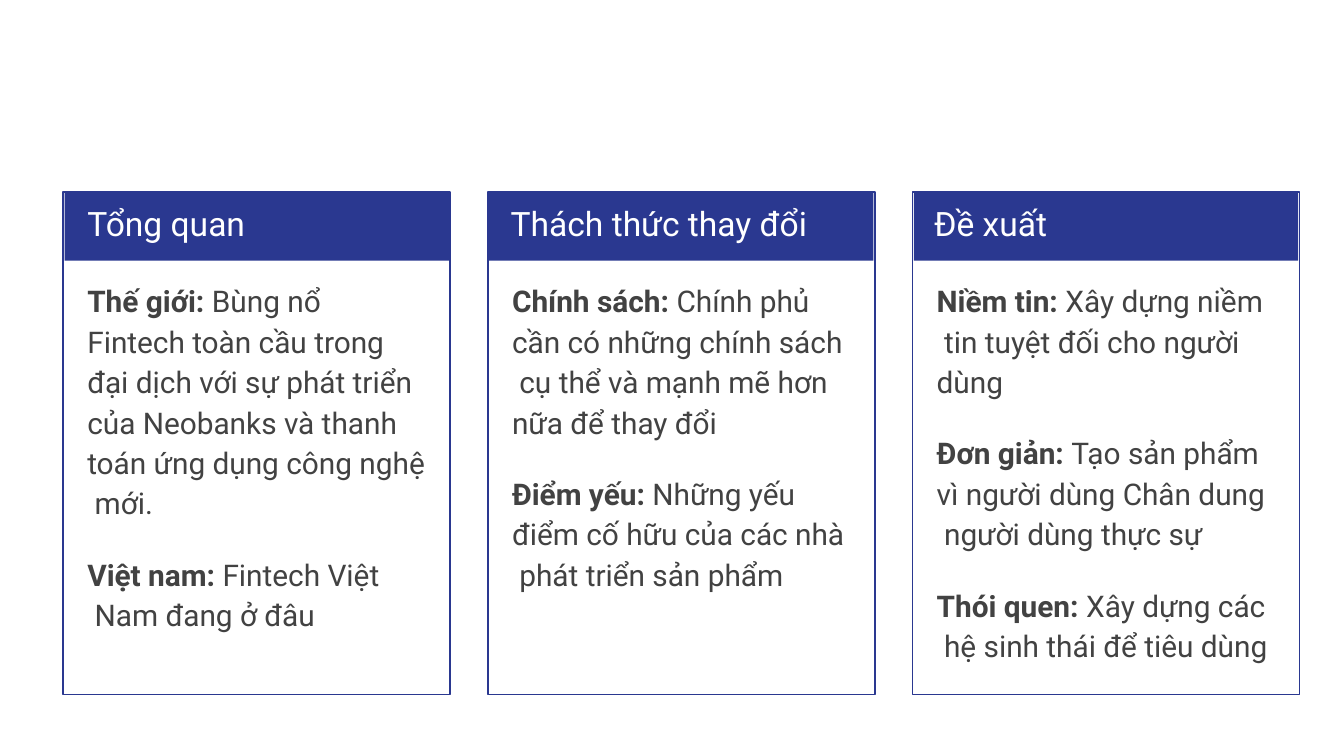
from pptx import Presentation
from pptx.dml.color import RGBColor
from pptx.enum.shapes import MSO_SHAPE
from pptx.enum.text import MSO_ANCHOR, MSO_AUTO_SIZE, PP_ALIGN
from pptx.util import Inches, Pt

RECTANGLE = MSO_SHAPE.RECTANGLE
TOP = MSO_ANCHOR.TOP
NO_AUTOFIT = MSO_AUTO_SIZE.NONE
LEFT = PP_ALIGN.LEFT

NAVY = RGBColor(0x2A, 0x38, 0x90)
WHITE = RGBColor(0xFF, 0xFF, 0xFF)
GREY = RGBColor(0x42, 0x42, 0x42)
FONT = "Roboto"

FIRST_LEFT, COLUMN_PITCH, COLUMN_WIDTH = 0.48, 3.16, 2.86
COLUMN_TOP, HEADER_HEIGHT, CARD_HEIGHT = 1.43, 0.51, 3.74
BODY_TOP = 2.06

COLUMNS = [
    ("Tổng quan", 0.17, 2.67, [
        ("Thế giới: ", "Bùng nổ\vFintech toàn cầu trong\vđại dịch với sự phát triển\v"
                       "của Neobanks và thanh\vtoán ứng dụng công nghệ\v mới."),
        ("Việt nam: ", "Fintech Việt\v Nam đang ở đâu"),
    ]),
    ("Thách thức thay đổi", 0.16, 2.37, [
        ("Chính sách: ", "Chính phủ\vcần có những chính sách\v"
                         " cụ thể và mạnh mẽ hơn\vnữa để thay đổi"),
        ("Điểm yếu: ", "Những yếu\vđiểm cố hữu của các nhà\v phát triển sản phẩm"),
    ]),
    ("Đề xuất", 0.15, 2.9, [
        ("Niềm tin: ", "Xây dựng niềm\v tin tuyệt đối cho người\vdùng"),
        ("Đơn giản: ", "Tạo sản phẩm\vvì người dùng Chân dung\v người dùng thực sự"),
        ("Thói quen: ", "Xây dựng các\v hệ sinh thái để tiêu dùng"),
    ]),
]


def set_frame(frame, indent, top):
    frame.word_wrap = True
    frame.auto_size = NO_AUTOFIT
    frame.vertical_anchor = TOP
    frame.margin_left, frame.margin_top = Inches(indent), Inches(top)
    frame.margin_right = frame.margin_bottom = 0


def format_paragraph(paragraph, size, color, spacing, before):
    paragraph.alignment = LEFT
    paragraph.line_spacing = spacing
    paragraph.space_before = Pt(before)
    for run in paragraph.runs:
        run.font.name = FONT
        run.font.size = Pt(size)
        run.font.color.rgb = color


prs = Presentation()
prs.slide_width = Inches(10)
prs.slide_height = prs.slide_width * 9 // 16
slide = prs.slides.add_slide(prs.slide_layouts[5])
shapes = slide.shapes

for column, (heading, heading_indent, body_height, points) in enumerate(COLUMNS):
    left = FIRST_LEFT + column * COLUMN_PITCH

    card = shapes.add_shape(RECTANGLE, Inches(left - 0.01), Inches(COLUMN_TOP),
                            Inches(COLUMN_WIDTH + 0.02), Inches(CARD_HEIGHT))
    card.shadow.inherit = False
    card.fill.background()
    card.line.color.rgb = NAVY
    card.line.width = Pt(0.75)

    if column == 0:
        header = shapes.title
        header.left, header.top = Inches(left), Inches(COLUMN_TOP)
        header.width, header.height = Inches(COLUMN_WIDTH), Inches(HEADER_HEIGHT)
    else:
        header = shapes.add_shape(RECTANGLE, Inches(left), Inches(COLUMN_TOP),
                                  Inches(COLUMN_WIDTH), Inches(HEADER_HEIGHT))
        header.shadow.inherit = False
    header.fill.solid()
    header.fill.fore_color.rgb = NAVY
    header.line.fill.background()
    header.text_frame.text = heading
    set_frame(header.text_frame, heading_indent, 0.08)
    format_paragraph(header.text_frame.paragraphs[0], 18, WHITE, 1.0, 6)

    body = shapes.add_textbox(Inches(left), Inches(BODY_TOP),
                              Inches(COLUMN_WIDTH), Inches(body_height)).text_frame
    set_frame(body, 0.17, 0.01)
    for number, (label, detail) in enumerate(points):
        paragraph = body.add_paragraph() if number else body.paragraphs[0]
        paragraph.text = label
        paragraph.runs[0].font.bold = True
        for row, line in enumerate(detail.split("\v")):
            if row:
                paragraph.add_line_break()
            paragraph.add_run().text = line
        format_paragraph(paragraph, 16, GREY, 1.13, 16.5 if number else 1)

prs.save("out.pptx")
